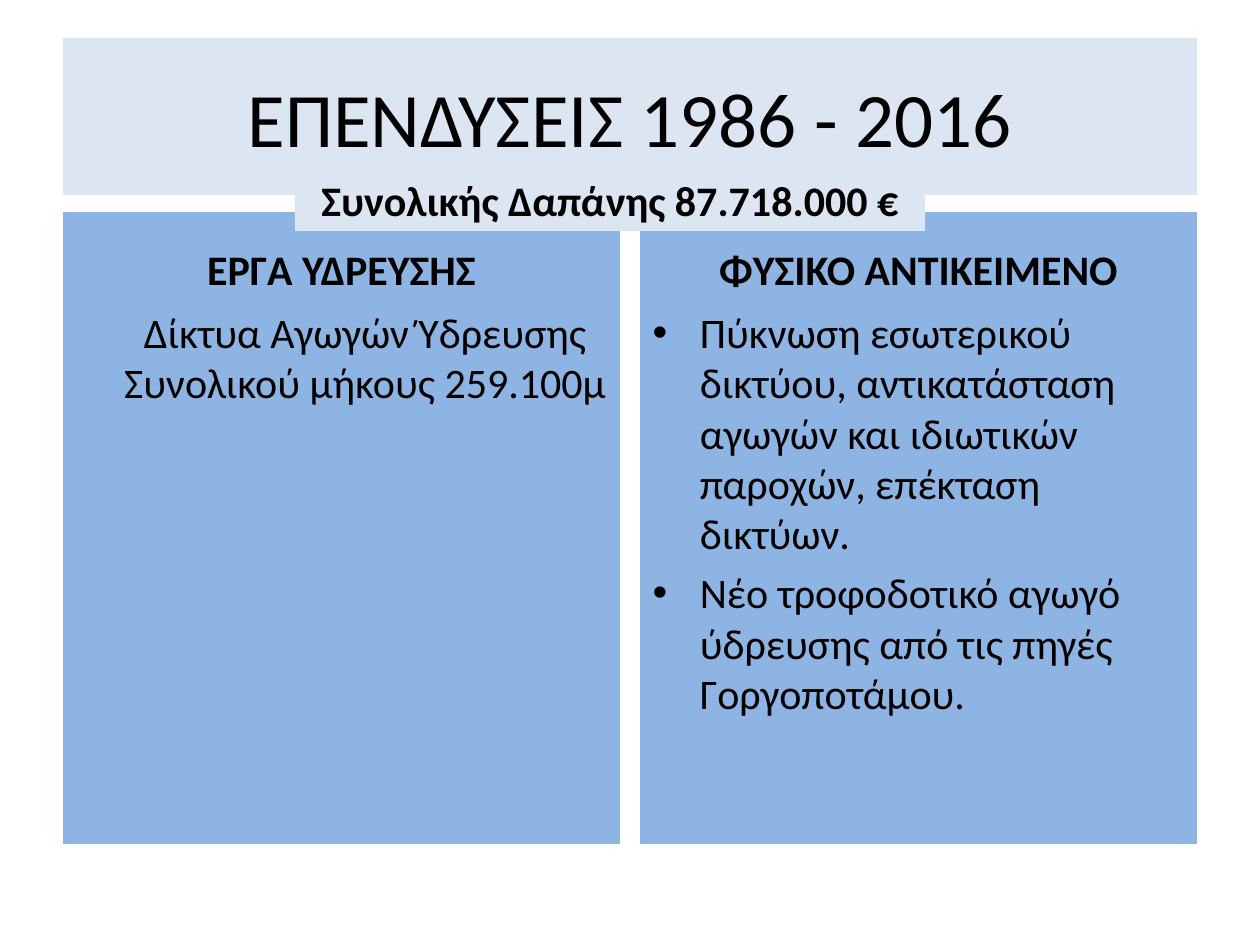
from pptx import Presentation
from pptx.dml.color import RGBColor
from pptx.enum.text import MSO_ANCHOR as Anchor, MSO_AUTO_SIZE as AutoSize, PP_ALIGN as Align
from pptx.oxml.ns import qn
from pptx.util import Emu, Pt
from lxml.etree import SubElement

TITLE = "ΕΠΕΝΔΥΣΕΙΣ 1986 - 2016"
TOTAL = "Συνολικής Δαπάνης 87.718.000 €"
COLUMNS = [
    {"heading": "ΕΡΓΑ ΥΔΡΕΥΣΗΣ", "bullets": False,
     "items": ["\tΔίκτυα Αγωγών Ύδρευσης Συνολικού μήκους 259.100μ"]},
    {"heading": "ΦΥΣΙΚΟ ΑΝΤΙΚΕΙΜΕΝΟ", "bullets": True,
     "items": ["Πύκνωση εσωτερικού δικτύου, αντικατάσταση αγωγών και ιδιωτικών "
               "παροχών, επέκταση δικτύων.",
               "Νέο τροφοδοτικό αγωγό ύδρευσης από τις πηγές Γοργοποτάμου."]},
]

THEME = {
    "font": "Calibri", "ink": RGBColor(0, 0, 0),
    "pale": RGBColor(0xDC, 0xE6, 0xF2), "blue": RGBColor(0x8E, 0xB4, 0xE3),
    "title": Pt(44), "text": Pt(24),
}
SCALE = 914400 / 126
WIDTH, HEIGHT = 1260, 945
MARGIN, GAP = 63, 20
COLUMN_WIDTH = (WIDTH - 2 * MARGIN - GAP) // 2
HEADING_TOP, HEADING_HEIGHT, LIST_HEIGHT = 212, 88, 544


def px(value):
    return Emu(round(value * SCALE))


def apply(target, values):
    for name, value in values.items():
        setattr(target, name, value)


def fill_box(box, place, lines, fill, size="text", bold=False,
             anchor=Anchor.TOP, align=Align.CENTER):
    apply(box, dict(zip(("left", "top", "width", "height"), map(px, place))))
    box.fill.solid()
    box.fill.fore_color.rgb = THEME[fill]
    frame = box.text_frame
    apply(frame, {"word_wrap": True, "auto_size": AutoSize.NONE, "vertical_anchor": anchor})
    for index, line in enumerate(lines):
        para = frame.add_paragraph() if index else frame.paragraphs[0]
        para.alignment = align
        span = para.add_run()
        span.text = line
        apply(span.font, {"name": THEME["font"], "size": THEME[size], "bold": bold})
        span.font.color.rgb = THEME["ink"]


def remove_bullets(box):
    for para in box.text_frame.paragraphs:
        SubElement(para._p.get_or_add_pPr(), qn("a:buNone"))


def main():
    deck = Presentation()
    apply(deck, {"slide_width": px(WIDTH), "slide_height": px(HEIGHT)})
    page = deck.slides.add_slide(deck.slide_layouts.get_by_name("Comparison"))
    title, *bodies = page.placeholders
    fill_box(title, (MARGIN, 38, WIDTH - 2 * MARGIN, 157), [TITLE], "pale",
             size="title", anchor=Anchor.MIDDLE)

    for index, column in enumerate(COLUMNS):
        heading, listing = bodies[2 * index:2 * index + 2]
        left = MARGIN + index * (COLUMN_WIDTH + GAP)
        fill_box(heading, (left, HEADING_TOP, COLUMN_WIDTH, HEADING_HEIGHT),
                 [column["heading"]], "blue", bold=True, anchor=Anchor.BOTTOM)
        fill_box(listing, (left, HEADING_TOP + HEADING_HEIGHT, COLUMN_WIDTH, LIST_HEIGHT),
                 column["items"], "blue",
                 align=Align.LEFT if column["bullets"] else Align.CENTER)
        if not column["bullets"]:
            remove_bullets(listing)

    total = page.shapes.add_textbox(0, 0, 0, 0)
    fill_box(total, (295, 168, 630, 63), [TOTAL], "pale", bold=True)
    deck.save("out.pptx")


if __name__ == "__main__":
    main()
